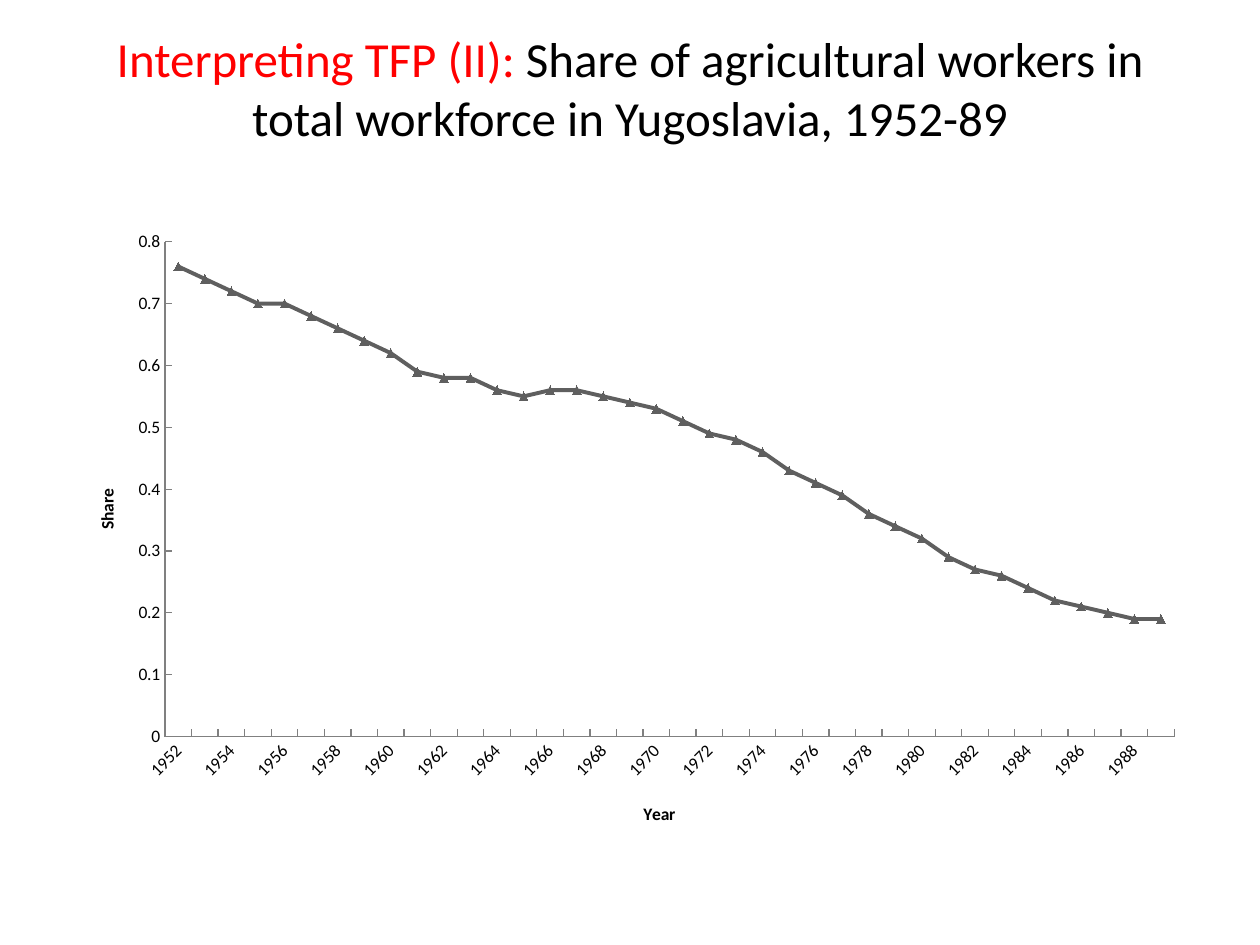
import pptx
import pptx.chart.data
import pptx.dml.color
import pptx.enum.chart
import pptx.enum.text
import pptx.oxml
import pptx.oxml.ns
import pptx.util

COLORS = {"accent": "FF0000", "text": "000000", "line": "5F5F5F", "axis": "808080"}
FONT = "Calibri"
EMU_PER_PX = 914400 // 126
TITLE_BOX = (63, 8, 1134, 158)
CHART_BOX = (63, 220, 1134, 624)

TITLE = [
    ("Interpreting TFP (II): ", "accent"),
    ("Share of agricultural workers in total workforce in Yugoslavia, 1952-89", "text"),
]
FIRST_YEAR = 1952
SHARES = [
    0.76, 0.74, 0.72, 0.70, 0.70, 0.68, 0.66, 0.64, 0.62, 0.59,
    0.58, 0.58, 0.56, 0.55, 0.56, 0.56, 0.55, 0.54, 0.53, 0.51,
    0.49, 0.48, 0.46, 0.43, 0.41, 0.39, 0.36, 0.34, 0.32, 0.29,
    0.27, 0.26, 0.24, 0.22, 0.21, 0.20, 0.19, 0.19,
]
# Places inside the chart, in slide px: left, top and, for the plot, width, height
PLOT_PLACE = (165, 242, 1009, 495)
YEAR_PLACE = (640, 800)
SHARE_PLACE = (92, 486)


def emu(lengths):
    return [pptx.util.Emu(px * EMU_PER_PX) for px in lengths]


def rgb(name):
    return pptx.dml.color.RGBColor.from_string(COLORS[name])


def style(font, size, color="text", bold=False):
    font.name, font.size, font.bold = FONT, pptx.util.Pt(size), bold
    font.color.rgb = rgb(color)


def chart_xml(tag, content="", **attributes):
    listed = "".join(f' {key}="{value}"' for key, value in attributes.items())
    return pptx.oxml.parse_xml(
        f'<c:{tag} {pptx.oxml.ns.nsdecls("c")}{listed}>{content}</c:{tag}>')


def place(element, index, box):
    """Give a chart part a manual layout, as fractions of the chart."""
    for old in element.findall(pptx.oxml.ns.qn("c:layout")):
        element.remove(old)
    left, top, width, height = CHART_BOX
    fractions = [(box[0] - left) / width, (box[1] - top) / height]
    content = '<c:layoutTarget val="inner"/>' if len(box) == 4 else ""
    content += '<c:xMode val="edge"/><c:yMode val="edge"/>'
    if len(box) == 4:
        fractions += [box[2] / width, box[3] / height]
    for key, fraction in zip("xywh", fractions):
        content += f'<c:{key} val="{fraction:.3f}"/>'
    element.insert(index, chart_xml("layout", f"<c:manualLayout>{content}</c:manualLayout>"))


def format_axis(axis, title, title_place):
    axis.has_major_gridlines = False
    axis.major_tick_mark = pptx.enum.chart.XL_TICK_MARK.INSIDE
    axis.minor_tick_mark = pptx.enum.chart.XL_TICK_MARK.NONE
    axis.format.line.color.rgb = rgb("axis")
    axis.format.line.width = pptx.util.Pt(0.75)
    style(axis.tick_labels.font, 10)
    heading = axis.axis_title.text_frame
    heading.text = title
    style(heading.paragraphs[0].runs[0].font, 10, bold=True)
    place(axis.axis_title._element, 1, title_place)


def add_title(slide):
    frame = slide.shapes.add_textbox(*emu(TITLE_BOX)).text_frame
    frame.word_wrap = True
    frame.vertical_anchor = pptx.enum.text.MSO_ANCHOR.MIDDLE
    paragraph = frame.paragraphs[0]
    paragraph.alignment = pptx.enum.text.PP_ALIGN.CENTER
    for words, color in TITLE:
        run = paragraph.add_run()
        run.text = words
        style(run.font, 28, color)


def add_share_chart(slide):
    data = pptx.chart.data.CategoryChartData()
    data.categories = [str(FIRST_YEAR + i) for i in range(len(SHARES))]
    data.add_series("Series 1", SHARES)
    chart = slide.shapes.add_chart(
        pptx.enum.chart.XL_CHART_TYPE.LINE_MARKERS, *emu(CHART_BOX), data).chart
    chart.has_legend = chart.has_title = False
    style(chart.font, 10)
    place(chart._chartSpace.chart.plotArea, 0, PLOT_PLACE)

    years, shares = chart.category_axis, chart.value_axis
    format_axis(years, "Year", YEAR_PLACE)
    format_axis(shares, "Share", SHARE_PLACE)
    shares.minimum_scale, shares.maximum_scale, shares.major_unit = 0, 0.8, 0.1
    shares.tick_labels.number_format = "General"
    shares.tick_labels.number_format_is_linked = False
    years_xml = years._element
    years_xml.find(pptx.oxml.ns.qn("c:txPr")).find(
        pptx.oxml.ns.qn("a:bodyPr")).set("rot", "-2700000")
    years_xml.find(pptx.oxml.ns.qn("c:noMultiLvlLbl")).addprevious(
        chart_xml("tickLblSkip", val=2))

    chart.plots[0].vary_by_categories = False
    trend = chart.plots[0].series[0]
    trend.smooth = False
    trend.format.line.color.rgb = rgb("line")
    trend.format.line.width = pptx.util.Pt(2.25)
    trend.marker.style = pptx.enum.chart.XL_MARKER_STYLE.TRIANGLE
    trend.marker.size = 5
    trend.marker.format.fill.solid()
    trend.marker.format.fill.fore_color.rgb = rgb("line")
    trend.marker.format.line.fill.background()


def main():
    deck = pptx.Presentation()
    deck.slide_width, deck.slide_height = pptx.util.Inches(10), pptx.util.Inches(7.5)
    slide = deck.slides.add_slide(deck.slide_layouts[6])
    add_title(slide)
    add_share_chart(slide)
    deck.save("out.pptx")


if __name__ == "__main__":
    main()
